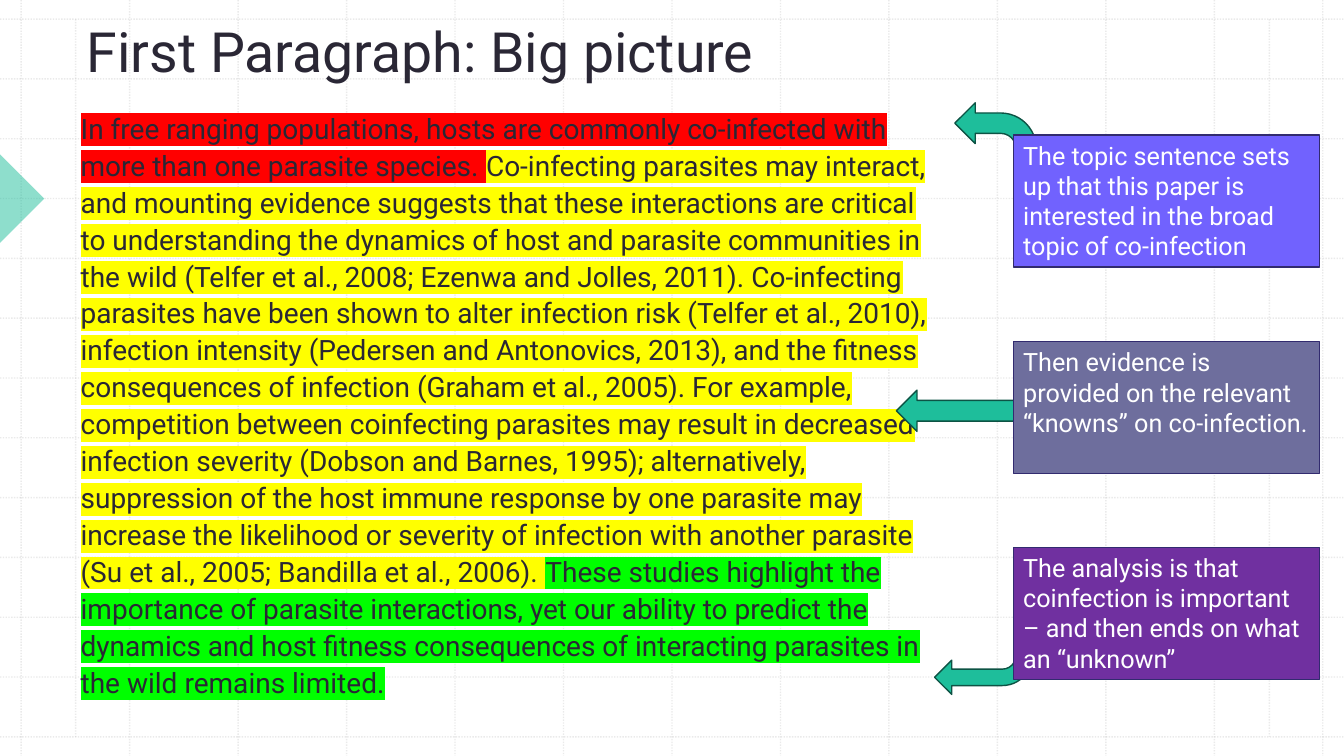
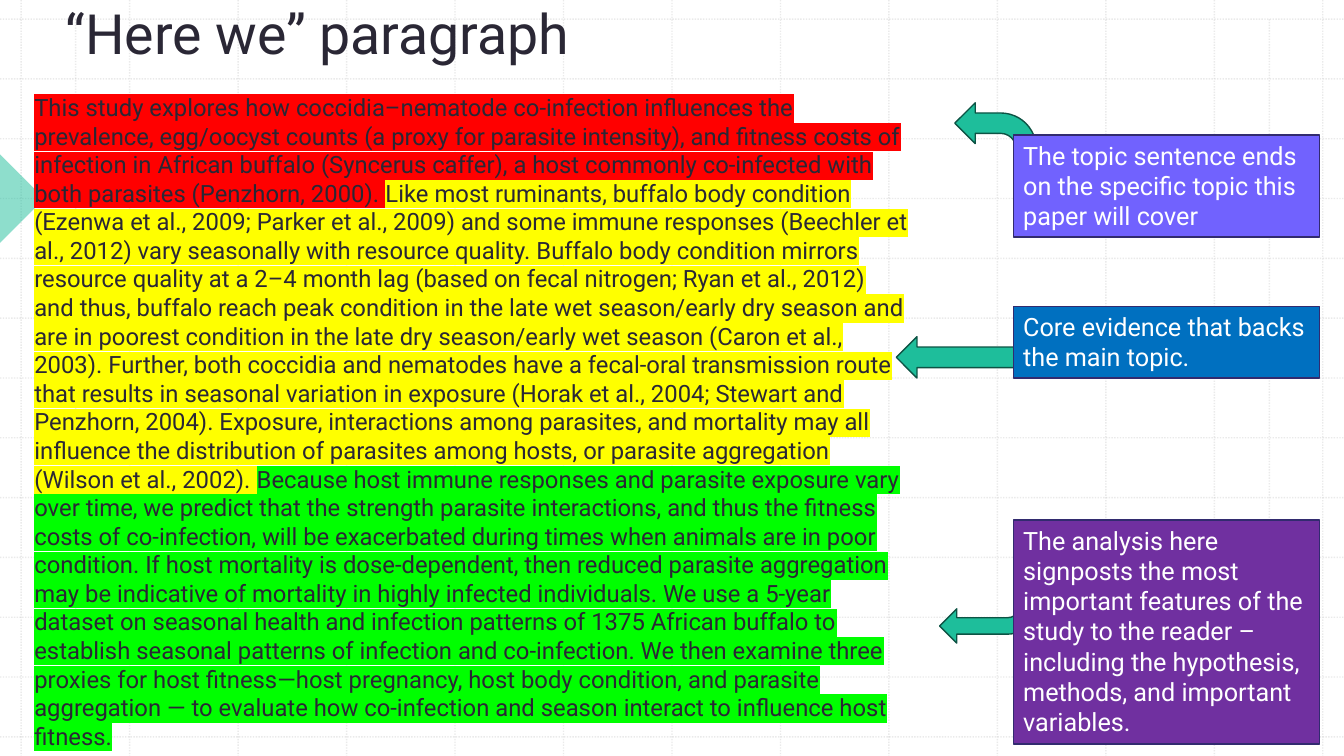
from lxml import etree
from pptx import Presentation
from pptx.dml.color import RGBColor
from pptx.enum import dml, shapes, text
from pptx.oxml import ns
from pptx.util import Inches, Pt

FONT = "Roboto"
COLORS = {
    "ink": "2A2735", "white": "FFFFFF", "grid": "BCBCBC",
    "teal": "1EBE9B", "teal_edge": "0D5344", "note_edge": "322B6F",
    "topic": "7162FE", "slate": "6E6E9D", "blue": "0070C0", "analysis": "7030A0",
    "red": "FF0000", "yellow": "FFFF00", "green": "00FF00",
}
SLIDE_W, SLIDE_H = 13.33, 7.5
GRID_LEFT, GRID_RIGHT, GRID_TOP, GRID_BOTTOM = 0.21, 13.12, 0.19, 7.31
GRID_CELLS = 12
FRAME_XS = (0.75, 12.59)
NOTE_LEFT, NOTE_W = 10.05, 3.04
HIGHLIGHTS = ("red", "yellow", "green")

# Arrow of each note: preset, width, height, flips, adjustments
ARROWS = {
    "topic": (shapes.MSO_SHAPE.BENT_ARROW, 0.81, 0.93, ("flipH",), ()),
    "evidence": (shapes.MSO_SHAPE.LEFT_ARROW, 1.17, 0.41, (), ()),
    "analysis": (shapes.MSO_SHAPE.BENT_ARROW, 0.97, 0.68, ("flipH", "flipV"),
                 (0.24, 0.25, 0.25, 0.44)),
}

SLIDES = [
    {
        "title": "First Paragraph: Big picture",
        "title_box": (0.76, 0.25, 11.29, 0.63),
        "body_box": (0.7, 1.02, 8.63, 6.22),
        "size": 20,
        "spacing": 1.1,
        "passages": (
            "In free ranging populations, hosts are commonly co-infected with more than one "
            "parasite species. ",
            "Co-infecting parasites may interact, and mounting evidence suggests that these "
            "interactions are critical to understanding the dynamics of host and parasite "
            "communities in the wild (Telfer et al., 2008; Ezenwa and Jolles, 2011). "
            "Co-infecting parasites have been shown to alter infection risk (Telfer et al., "
            "2010), infection intensity (Pedersen and Antonovics, 2013), and the fitness "
            "consequences of infection (Graham et al., 2005). For example, competition between "
            "coinfecting parasites may result in decreased infection severity (Dobson and "
            "Barnes, 1995); alternatively, suppression of the host immune response by one "
            "parasite may increase the likelihood or severity of infection with another "
            "parasite (Su et al., 2005; Bandilla et al., 2006). ",
            "These studies highlight the importance of parasite interactions, yet our ability "
            "to predict the dynamics and host fitness consequences of interacting parasites in "
            "the wild remains limited.",
        ),
        # Role, fill, top, height, arrow offset from the note's corner, text
        "notes": (
            ("topic", "topic", 1.34, 1.31, (-0.58, -0.32),
             "The topic sentence sets up that this paper is interested in the broad topic of "
             "co-infection"),
            ("evidence", "slate", 3.39, 1.31, (-1.16, 0.48),
             "Then evidence is provided on the relevant “knowns” on co-infection."),
            ("analysis", "analysis", 5.43, 1.31, (-0.78, 0.78),
             "The analysis is that coinfection is important – and then ends on what an "
             "“unknown”"),
        ),
    },
    {
        "title": "“Here we” paragraph",
        "title_box": (0.55, 0.03, 11.29, 0.67),
        "body_box": (0.24, 0.87, 8.87, 6.69),
        "size": 17,
        "spacing": 1.0,
        "passages": (
            "This study explores how coccidia–nematode co-infection influences the prevalence, "
            "egg/oocyst counts (a proxy for parasite intensity), and fitness costs of infection "
            "in African buffalo (Syncerus caffer), a host commonly co-infected with both "
            "parasites (Penzhorn, 2000). ",
            "Like most ruminants, buffalo body condition (Ezenwa et al., 2009; Parker et al., "
            "2009) and some immune responses (Beechler et al., 2012) vary seasonally with "
            "resource quality. Buffalo body condition mirrors resource quality at a 2–4 month "
            "lag (based on fecal nitrogen; Ryan et al., 2012) and thus, buffalo reach peak "
            "condition in the late wet season/early dry season and are in poorest condition in "
            "the late dry season/early wet season (Caron et al., 2003). Further, both coccidia "
            "and nematodes have a fecal-oral transmission route that results in seasonal "
            "variation in exposure (Horak et al., 2004; Stewart and Penzhorn, 2004). Exposure, "
            "interactions among parasites, and mortality may all influence the distribution of "
            "parasites among hosts, or parasite aggregation (Wilson et al., 2002). ",
            "Because host immune responses and parasite exposure vary over time, we predict "
            "that the strength parasite interactions, and thus the fitness costs of "
            "co-infection, will be exacerbated during times when animals are in poor condition. "
            "If host mortality is dose-dependent, then reduced parasite aggregation may be "
            "indicative of mortality in highly infected individuals. We use a 5-year dataset on "
            "seasonal health and infection patterns of 1375 African buffalo to establish "
            "seasonal patterns of infection and co-infection. We then examine three proxies for "
            "host fitness—host pregnancy, host body condition, and parasite aggregation — to "
            "evaluate how co-infection and season interact to influence host fitness.",
        ),
        "notes": (
            ("topic", "topic", 1.34, 1.01, (-0.58, -0.32),
             "The topic sentence ends on the specific topic this paper will cover"),
            ("evidence", "blue", 3.04, 0.71, (-1.16, 0.3),
             "Core evidence that backs the main topic."),
            ("analysis", "analysis", 5.16, 2.22, (-0.73, 0.54),
             "The analysis here signposts the most important features of the study to the "
             "reader – including the hypothesis, methods, and important variables."),
        ),
    },
]


def rgb(name):
    return RGBColor.from_string(COLORS[name])


def set_alpha(color_parent, percent):
    clr = color_parent.find(".//" + ns.qn("a:srgbClr"))
    etree.SubElement(clr, ns.qn("a:alpha")).set("val", str(percent * 1000))


def add_text(p, content, size, color="ink", highlight=None):
    r = p.add_run()
    r.text = content
    r.font.size = Pt(size)
    r.font.color.rgb = rgb(color)
    r.font.name = FONT
    if highlight:
        mark = etree.Element(ns.qn("a:highlight"))
        etree.SubElement(mark, ns.qn("a:srgbClr")).set("val", COLORS[highlight])
        r._r.rPr.find(ns.qn("a:solidFill")).addnext(mark)


def add_block(slide, preset, box, fill, edge=None):
    sp = slide.shapes.add_shape(preset, *map(Inches, box))
    sp.shadow.inherit = False
    sp.fill.solid()
    sp.fill.fore_color.rgb = rgb(fill)
    if edge:
        sp.line.color.rgb = rgb(edge)
        sp.line.width = Pt(1)
    else:
        sp.line.fill.background()
    return sp


def add_grid_line(slide, x1, y1, x2, y2):
    line = slide.shapes.add_connector(
        shapes.MSO_CONNECTOR.STRAIGHT, *map(Inches, (x1, y1, x2, y2)))
    line.line.color.rgb = rgb("grid")
    line.line.width = Pt(1)
    line.line.dash_style = dml.MSO_LINE.ROUND_DOT
    sp_pr = line._element.spPr
    set_alpha(sp_pr, 30)
    etree.SubElement(sp_pr, ns.qn("a:effectLst"))
    return line


def add_backdrop(slide, layout):
    """Draw the dotted grid and side marker, then move them to the layout."""
    for sp in list(layout.placeholders)[2:]:
        sp._element.getparent().remove(sp._element)
    step_x = (GRID_RIGHT - GRID_LEFT) / GRID_CELLS
    step_y = (GRID_BOTTOM - GRID_TOP) / GRID_CELLS
    parts = []
    for i in range(GRID_CELLS + 1):
        x, y = GRID_LEFT + i * step_x, GRID_TOP + i * step_y
        parts.append(add_grid_line(slide, x, 0, x, SLIDE_H))
        parts.append(add_grid_line(slide, 0, y, SLIDE_W, y))
    for x in FRAME_XS:
        parts.append(add_grid_line(slide, x, GRID_TOP, x, GRID_BOTTOM))
    marker = add_block(slide, shapes.MSO_SHAPE.RIGHT_TRIANGLE, (-0.31, 1.66, 0.62, 0.62), "teal")
    marker.rotation = 225
    set_alpha(marker._element.spPr, 50)
    parts.append(marker)
    for i, sp in enumerate(parts):
        layout.shapes._spTree.insert(2 + i, sp._element)


def place_placeholder(sp, box, anchor):
    """Move a placeholder and return its one left-aligned paragraph."""
    sp.left, sp.top, sp.width, sp.height = map(Inches, box)
    tf = sp.text_frame
    tf.word_wrap = True
    tf.auto_size = text.MSO_AUTO_SIZE.NONE
    tf.vertical_anchor = anchor
    p = tf.paragraphs[0]
    p.alignment = text.PP_ALIGN.LEFT
    p.space_before = Pt(0)
    return p


def fill_title(slide, box, content):
    p = place_placeholder(slide.shapes.title, box, text.MSO_ANCHOR.BOTTOM)
    add_text(p, content, 39.6)


def fill_body(slide, box, passages, size, spacing):
    p = place_placeholder(slide.placeholders[1], box, text.MSO_ANCHOR.TOP)
    p.line_spacing = spacing
    p_pr = p._p.get_or_add_pPr()
    p_pr.set("marL", "0")
    p_pr.set("indent", "0")
    etree.SubElement(p_pr, ns.qn("a:buNone"))
    for passage, highlight in zip(passages, HIGHLIGHTS):
        add_text(p, passage, size, highlight=highlight)


def add_note(slide, box, role, fill, arrow_offset, content):
    """Add a note box with the arrow that points from it to the passage."""
    left, top = box[:2]
    dx, dy = arrow_offset
    preset, w, h, flips, adjustments = ARROWS[role]
    arrow = add_block(slide, preset, (left + dx, top + dy, w, h), "teal", "teal_edge")
    for flip in flips:
        arrow._element.spPr.xfrm.set(flip, "1")
    for i, value in enumerate(adjustments):
        arrow.adjustments[i] = value

    sp = add_block(slide, shapes.MSO_SHAPE.RECTANGLE, box, fill, "note_edge")
    tf = sp.text_frame
    tf.word_wrap = True
    tf.vertical_anchor = text.MSO_ANCHOR.TOP
    p = tf.paragraphs[0]
    p.alignment = text.PP_ALIGN.LEFT
    add_text(p, content, 18, color="white")


def build_slide(slide, data):
    fill_title(slide, data["title_box"], data["title"])
    fill_body(slide, data["body_box"], data["passages"], data["size"], data["spacing"])
    for role, fill, top, height, arrow_offset, content in data["notes"]:
        add_note(slide, (NOTE_LEFT, top, NOTE_W, height), role, fill, arrow_offset, content)


def main():
    prs = Presentation()
    prs.slide_width, prs.slide_height = Inches(SLIDE_W), Inches(SLIDE_H)
    layout = prs.slide_layouts[1]
    for i, data in enumerate(SLIDES):
        slide = prs.slides.add_slide(layout)
        if i == 0:
            add_backdrop(slide, layout)
        build_slide(slide, data)
    prs.save("out.pptx")


if __name__ == "__main__":
    main()
